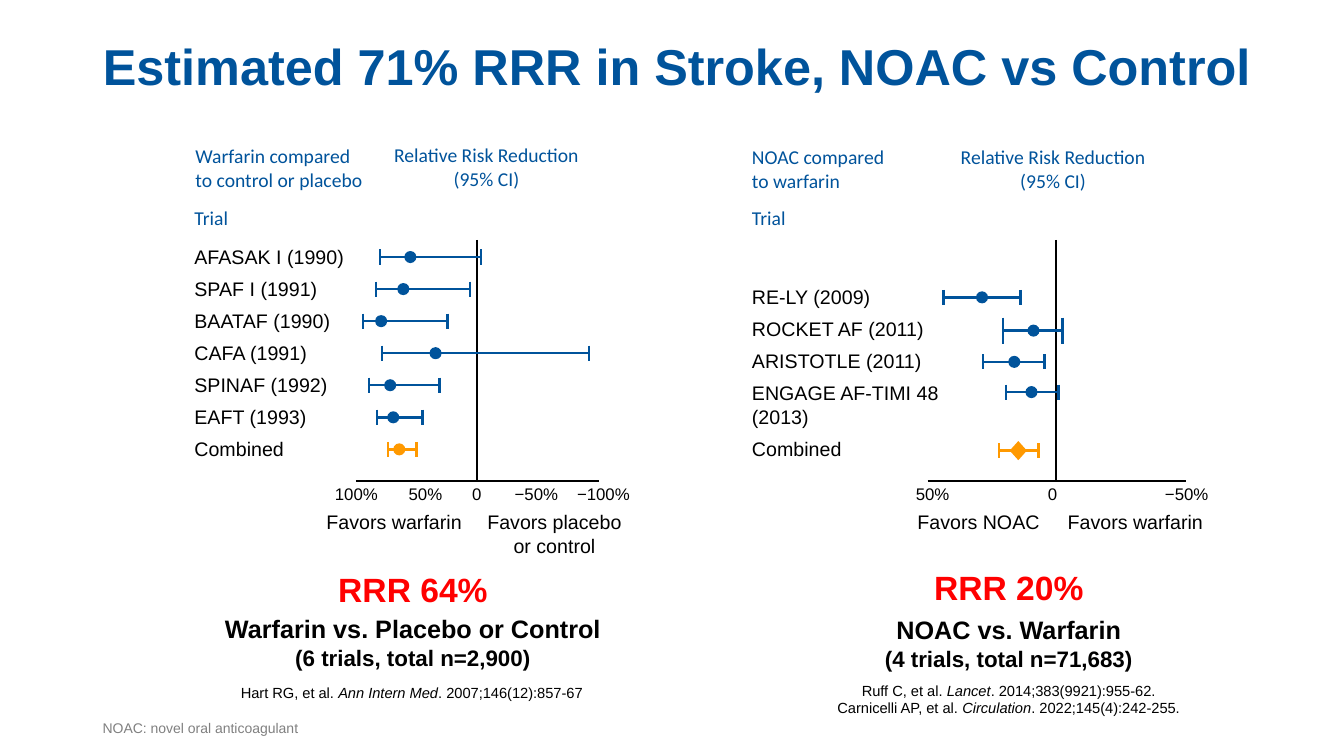
from dataclasses import dataclass

from lxml import etree
from pptx import Presentation
from pptx.dml.color import RGBColor
from pptx.enum.shapes import MSO_CONNECTOR, MSO_SHAPE
from pptx.enum.text import MSO_ANCHOR, MSO_AUTO_SIZE, PP_ALIGN
from pptx.oxml.ns import qn
from pptx.slide import Slide
from pptx.util import Inches, Pt

LEFT, CENTER, RIGHT = PP_ALIGN.LEFT, PP_ALIGN.CENTER, PP_ALIGN.RIGHT
TOP, BOTTOM = MSO_ANCHOR.TOP, MSO_ANCHOR.BOTTOM
NO_FIT, GROW = MSO_AUTO_SIZE.NONE, MSO_AUTO_SIZE.SHAPE_TO_FIT_TEXT
STRAIGHT = MSO_CONNECTOR.STRAIGHT
OVAL, DIAMOND = MSO_SHAPE.OVAL, MSO_SHAPE.DIAMOND

BLUE = RGBColor(0x00, 0x53, 0x9B)
ORANGE = RGBColor(0xFF, 0x99, 0x00)
BLACK = RGBColor(0x00, 0x00, 0x00)
RED = RGBColor(0xFF, 0x00, 0x00)
GRAY = RGBColor(0x80, 0x80, 0x80)

AXIS_TOP, AXIS_BOTTOM = 2.38, 4.77
TICK_TOP, FAVORS_TOP, TRIAL_TOP = 4.75, 5.01, 1.99
WARFARIN_ROW_TOP, WARFARIN_ROW_STEP = 2.55, 0.318


@dataclass(frozen=True)
class Label:
    left: float
    top: float
    width: float
    height: float
    text: str
    size: float = 14
    color: RGBColor = BLACK
    align: PP_ALIGN = CENTER
    font: str = "Arial"
    bold: bool = False
    wrap: bool = False
    anchor: MSO_ANCHOR = TOP
    space_before: float = 0
    later_size: float = 0


@dataclass(frozen=True)
class Estimate:
    low: float
    center: float
    high: float
    row: float
    color: RGBColor = BLUE
    cap: float = 0.15
    mark: MSO_SHAPE = OVAL
    mark_width: float = 0.12
    mark_height: float = 0.12


@dataclass(frozen=True)
class Panel:
    axis_left: float
    zero: float
    axis_right: float
    labels: list[Label]
    estimates: list[Estimate]


def heading(left: float, top: float, width: float, height: float, text: str,
            align: PP_ALIGN = LEFT) -> Label:
    return Label(left, top, width, height, text, color=BLUE, align=align, font="Calibri")


def tick(left: float, width: float, text: str) -> Label:
    return Label(left, TICK_TOP, width, 0.3, text, size=12)


def trials(left: float, top: float, width: float, height: float, names: list[str]) -> Label:
    return Label(left, top, width, height, "\n".join(names), align=LEFT, space_before=6)


def result(left: float, top: float, text: str) -> Label:
    return Label(left, top, 4.25, 0.5, text, size=24, color=RED, bold=True, wrap=True)


def comparison(left: float, top: float, text: str) -> Label:
    return Label(left, top, 4.25, 0.67, text, size=18, later_size=16, bold=True, wrap=True)


def citation(left: float, top: float, width: float, height: float, text: str) -> Label:
    return Label(left, top, width, height, text, size=10.5, anchor=BOTTOM)


WARFARIN = Panel(
    3.53, 4.73, 5.94,
    [
        heading(1.84, 1.38, 1.88, 0.57, "Warfarin compared\vto control or placebo"),
        heading(3.79, 1.37, 2.07, 0.57, "Relative Risk Reduction\n(95% CI)", CENTER),
        heading(1.83, TRIAL_TOP, 0.55, 0.34, "Trial"),
        trials(1.83, 2.38, 1.74, 2.26, [
            "AFASAK I (1990)", "SPAF I (1991)", "BAATAF (1990)", "CAFA (1991)",
            "SPINAF (1992)", "EAFT (1993)", "Combined"]),
        tick(3.22, 0.63, "100%"),
        tick(3.95, 0.54, "50%"),
        tick(4.58, 0.3, "0"),
        tick(5, 0.64, "−50%"),
        tick(5.62, 0.73, "−100%"),
        Label(3.13, FAVORS_TOP, 1.55, 0.34, "Favors warfarin", align=RIGHT),
        Label(4.73, FAVORS_TOP, 1.54, 0.57, "Favors placebo\vor control"),
        result(1.97, 5.59, "RRR 64%"),
        comparison(1.97, 6.04, "Warfarin vs. Placebo or Control\n(6 trials, total n=2,900)"),
        citation(2.22, 6.73, 3.73, 0.28,
                 "Hart RG, et al. *Ann Intern Med*. 2007;146(12):857-67"),
    ],
    [
        Estimate(low, center, high, WARFARIN_ROW_TOP + index * WARFARIN_ROW_STEP, color)
        for index, (low, center, high, color) in enumerate([
            (3.77, 4.07, 4.77, BLUE),
            (3.73, 4.00, 4.66, BLUE),
            (3.60, 3.78, 4.44, BLUE),
            (3.79, 4.32, 5.84, BLUE),
            (3.66, 3.87, 4.36, BLUE),
            (3.74, 3.90, 4.19, BLUE),
            (3.85, 3.96, 4.13, ORANGE),
        ])
    ],
)

NOAC = Panel(
    9.2, 10.47, 11.76,
    [
        heading(7.36, 1.39, 1.57, 0.57, "NOAC compared\vto warfarin"),
        heading(9.41, 1.39, 2.07, 0.57, "Relative Risk Reduction\n(95% CI)", CENTER),
        heading(7.36, TRIAL_TOP, 0.55, 0.34, "Trial"),
        trials(7.36, 2.78, 2.14, 1.85, [
            "RE-LY (2009)", "ROCKET AF (2011)", "ARISTOTLE (2011)",
            "ENGAGE AF-TIMI 48\v(2013)", "Combined"]),
        tick(8.98, 0.54, "50%"),
        tick(10.29, 0.3, "0"),
        tick(11.45, 0.64, "−50%"),
        Label(8.99, FAVORS_TOP, 1.42, 0.34, "Favors NOAC", align=RIGHT),
        Label(10.49, FAVORS_TOP, 1.55, 0.34, "Favors warfarin", align=LEFT),
        result(7.88, 5.58, "RRR 20%"),
        comparison(7.88, 6.05, "NOAC vs. Warfarin\n(4 trials, total n=71,683)"),
        citation(8.1, 6.71, 3.81, 0.45,
                 "Ruff C, et al. *Lancet*. 2014;383(9921):955-62.\n"
                 "Carnicelli AP, et al. *Circulation*. 2022;145(4):242-255."),
    ],
    [
        Estimate(9.36, 9.74, 10.12, 2.95),
        Estimate(9.95, 10.25, 10.54, 3.28, cap=0.26),
        Estimate(9.75, 10.06, 10.36, 3.59),
        Estimate(9.98, 10.23, 10.5, 3.89),
        Estimate(9.91, 10.1, 10.3, 4.47, ORANGE, mark=DIAMOND,
                 mark_width=0.17, mark_height=0.19),
    ],
)

FOOTNOTE = Label(0.92, 6.95, 11.5, 0.4, "NOAC: novel oral anticoagulant",
                 size=10, color=GRAY, align=LEFT, wrap=True, anchor=BOTTOM)


def add_title(page: Slide, text: str) -> None:
    title = page.shapes.title
    title.left, title.top = Inches(0.92), Inches(0)
    title.width, title.height = Inches(11.75), Inches(1.01)
    frame = title.text_frame
    frame.text = text
    frame.auto_size = NO_FIT
    frame.vertical_anchor = BOTTOM
    para = frame.paragraphs[0]
    para.alignment = LEFT
    para.line_spacing = 0.9
    font = para.runs[0].font
    font.name, font.size, font.bold = "Arial", Pt(36), True
    font.color.rgb = BLUE


def add_label(page: Slide, label: Label) -> None:
    box = page.shapes.add_textbox(Inches(label.left), Inches(label.top),
                                  Inches(label.width), Inches(label.height))
    frame = box.text_frame
    frame.word_wrap = label.wrap
    frame.auto_size = NO_FIT if label is FOOTNOTE else GROW
    frame.vertical_anchor = label.anchor
    for index, line in enumerate(label.text.split("\n")):
        para = frame.add_paragraph() if index else frame.paragraphs[0]
        para.alignment = label.align
        if index and label.space_before:
            para.space_before = Pt(label.space_before)
        size = label.later_size if index and label.later_size else label.size
        if "*" in line:
            for position, piece in enumerate(line.split("*")):
                span = para.add_run()
                span.text = piece
                span.font.italic = position % 2 == 1
        else:
            para.text = line
        for span in para.runs:
            span.font.name, span.font.size, span.font.bold = label.font, Pt(size), label.bold
            span.font.color.rgb = label.color


def add_line(page: Slide, x1: float, y1: float, x2: float, y2: float,
             color: RGBColor = BLACK, width: float = 1.5) -> None:
    line = page.shapes.add_connector(STRAIGHT, Inches(x1), Inches(y1), Inches(x2), Inches(y2))
    line.line.color.rgb = color
    line.line.width = Pt(width)
    etree.SubElement(line.element.spPr, qn("a:effectLst"))


def add_estimate(page: Slide, estimate: Estimate) -> None:
    row, half_cap = estimate.row, estimate.cap / 2
    for end in (estimate.high, estimate.low):
        add_line(page, end, row - half_cap, end, row + half_cap, estimate.color, 1.75)
    add_line(page, estimate.low, row, estimate.high, row, estimate.color, 1.75)
    width, height = estimate.mark_width, estimate.mark_height
    mark = page.shapes.add_shape(estimate.mark, Inches(estimate.center - width / 2),
                                 Inches(row - height / 2), Inches(width), Inches(height))
    mark.shadow.inherit = False
    mark.fill.solid()
    mark.fill.fore_color.rgb = estimate.color
    mark.line.fill.background()


def add_panel(page: Slide, panel: Panel) -> None:
    for label in panel.labels:
        add_label(page, label)
    add_line(page, panel.axis_left, AXIS_BOTTOM, panel.axis_right, AXIS_BOTTOM)
    add_line(page, panel.zero, AXIS_TOP, panel.zero, AXIS_BOTTOM)
    for estimate in panel.estimates:
        add_estimate(page, estimate)


def main() -> None:
    deck = Presentation()
    deck.slide_width, deck.slide_height = Inches(13.33), Inches(7.5)
    page = deck.slides.add_slide(deck.slide_layouts[5])
    add_title(page, "Estimated 71% RRR in Stroke, NOAC vs Control")
    add_label(page, FOOTNOTE)
    for panel in (WARFARIN, NOAC):
        add_panel(page, panel)
    deck.save("out.pptx")


if __name__ == "__main__":
    main()
